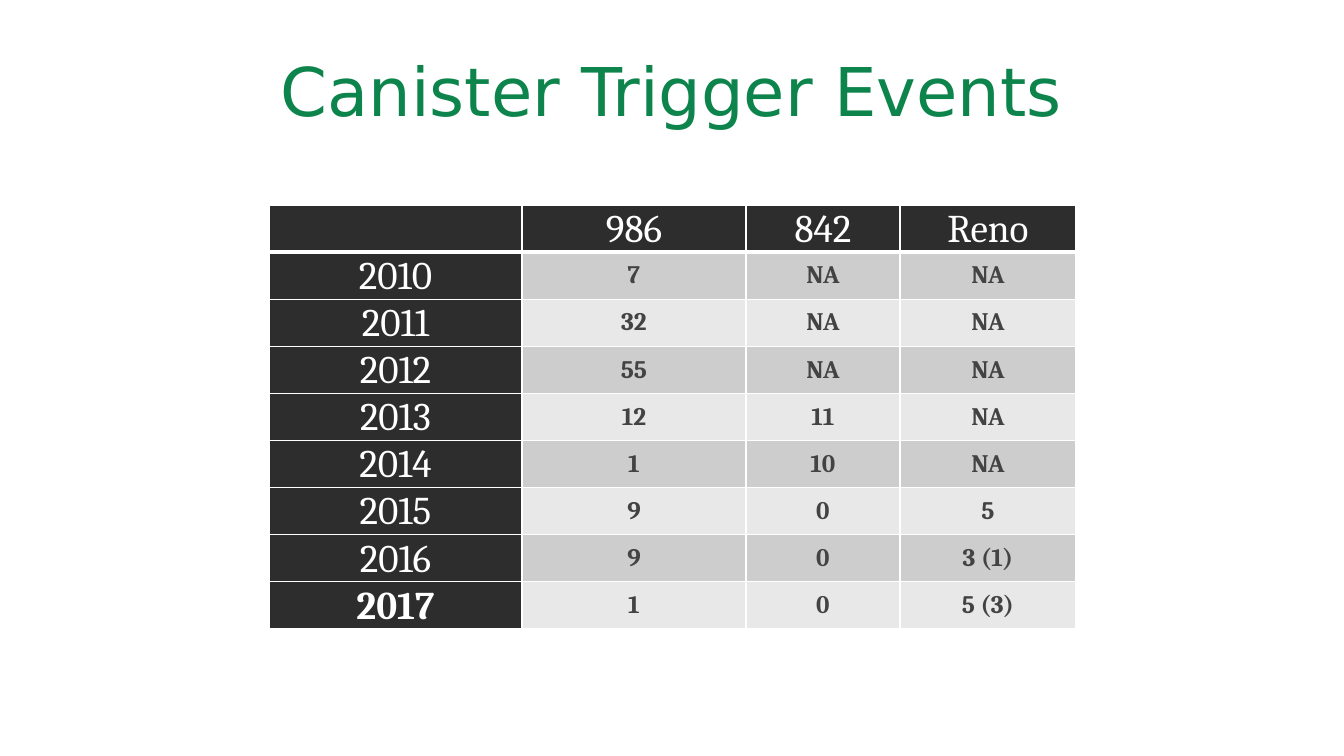
from lxml import etree
from pptx import Presentation, util as u
from pptx.dml.color import RGBColor
from pptx.enum import text as t
from pptx.oxml.ns import qn

SCALE = 914400 / 100.8
THEME = dict(
    title="0D844C", dark="2D2D2D", bands=("CDCDCD", "E8E8E8"),
    ink="434343", white="FFFFFF",
    head="DejaVu Sans", body="Cambria",
    big=48, label=28, value=18,
)


def px(n):
    return u.Emu(round(n * SCALE))


def write(frame, words, size, color, font, bold=False, space=None):
    para = frame.paragraphs[0]
    para.alignment = t.PP_ALIGN.CENTER
    para.line_spacing = space
    run = para.add_run()
    run.text = words
    run.font.size = u.Pt(size)
    run.font.name = font
    run.font.bold = bold
    run.font.color.rgb = RGBColor.from_string(color)


deck = Presentation()
deck.slide_width, deck.slide_height = px(1344), px(756)
slide = deck.slides.add_slide(deck.slide_layouts[6])

# Title
title = slide.shapes.add_textbox(px(237), px(54), px(869), px(132)).text_frame
title.word_wrap = True
write(title, "Canister Trigger Events", THEME["big"], THEME["title"],
      THEME["head"], space=0.9)

# Table
rows = [
    ("", "986", "842", "Reno"),
    ("2010", "7", "NA", "NA"),
    ("2011", "32", "NA", "NA"),
    ("2012", "55", "NA", "NA"),
    ("2013", "12", "11", "NA"),
    ("2014", "1", "10", "NA"),
    ("2015", "9", "0", "5"),
    ("2016", "9", "0", "3 (1)"),
    ("2017", "1", "0", "5 (3)"),
]
widths = (253, 224, 154, 176)
high = 45
table = slide.shapes.add_table(
    len(rows), len(widths), px(269), px(205),
    px(sum(widths)), px(high * len(rows))).table
for col, width in zip(table.columns, widths):
    col.width = px(width)

for r, row in enumerate(rows):
    table.rows[r].height = px(high)
    for c, words in enumerate(row):
        cell = table.cell(r, c)
        label = r == 0 or c == 0
        cell.margin_left = cell.margin_right = px(7)
        cell.margin_top = cell.margin_bottom = 0
        cell.vertical_anchor = (t.MSO_ANCHOR.BOTTOM if label
                                else t.MSO_ANCHOR.MIDDLE)
        cell.fill.solid()
        cell.fill.fore_color.rgb = RGBColor.from_string(
            THEME["dark"] if label else THEME["bands"][(r - 1) % 2])
        if words:
            write(cell.text_frame, words,
                  THEME["label" if label else "value"],
                  THEME["white" if label else "ink"], THEME["body"],
                  bold=not label or words == "2017")

        # White cell borders, heavier below the header
        props = cell._tc.get_or_add_tcPr()
        for i, side in enumerate("LRTB"):
            points = 3 if r == 0 and side == "B" else 1
            line = etree.Element(qn("a:ln" + side), w=str(u.Pt(points)))
            fill = etree.SubElement(line, qn("a:solidFill"))
            etree.SubElement(fill, qn("a:srgbClr"), val=THEME["white"])
            props.insert(i, line)

deck.save("out.pptx")
